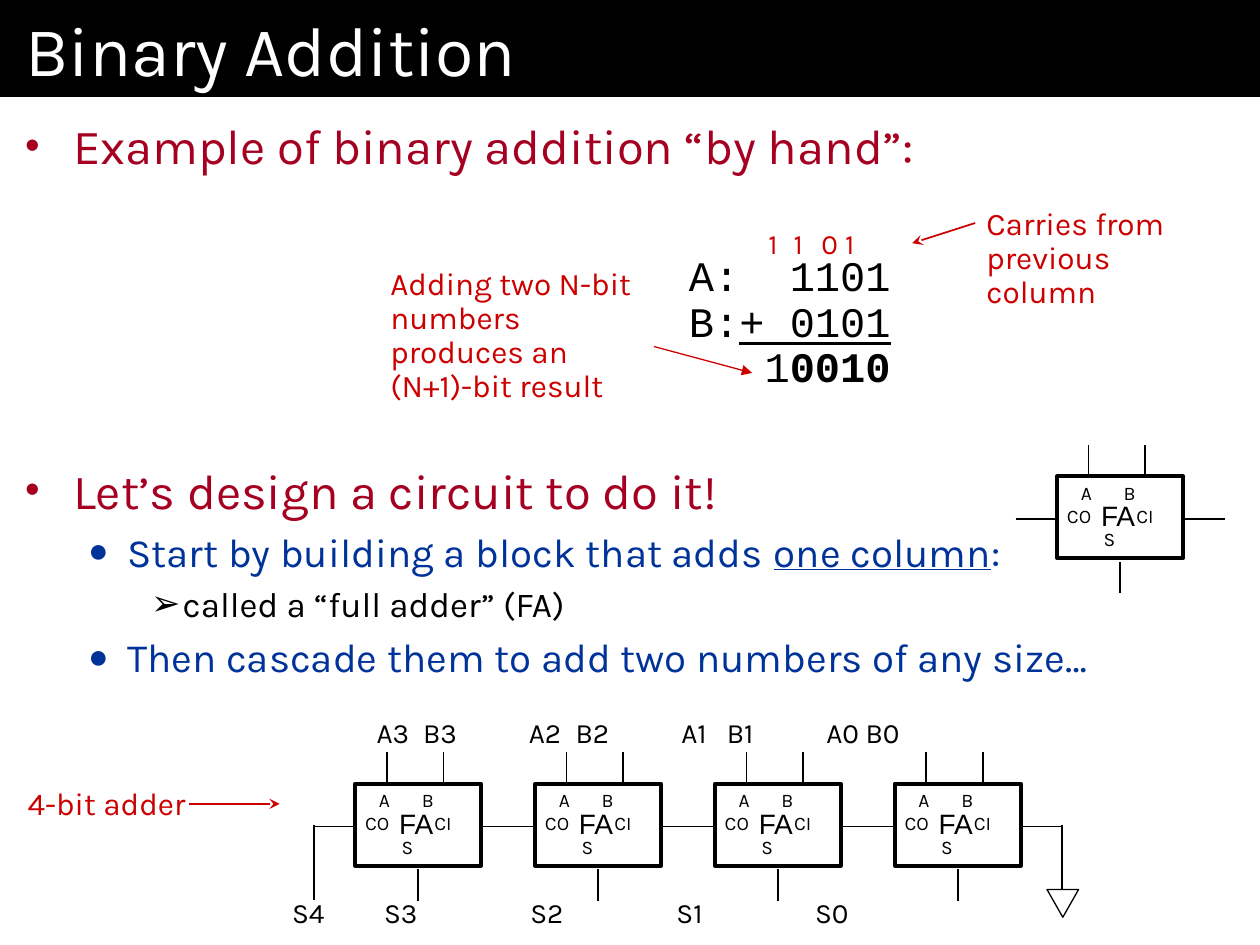
from lxml import etree
from pptx import Presentation
from pptx.dml.color import RGBColor
from pptx.enum.dml import MSO_FILL
from pptx.enum.shapes import MSO_CONNECTOR, MSO_SHAPE
from pptx.enum.text import MSO_ANCHOR, MSO_AUTO_SIZE, PP_ALIGN
from pptx.oxml.ns import qn
from pptx.util import Emu, Inches, Pt

STRAIGHT = MSO_CONNECTOR.STRAIGHT
RECT, TRIANGLE = MSO_SHAPE.RECTANGLE, MSO_SHAPE.ISOSCELES_TRIANGLE
LEFT, TOP, MIDDLE = PP_ALIGN.LEFT, MSO_ANCHOR.TOP, MSO_ANCHOR.MIDDLE
NO_FIT = MSO_AUTO_SIZE.NONE
COLS, ROWS = 100, 75
BLACK, WHITE, RED, CRIMSON, BLUE = "000000", "FFFFFF", "CC0000", "A50021", "003399"


def rgb(value):
    return RGBColor.from_string(value)


def add_xml(parent, tag, **attrs):
    return etree.SubElement(parent, qn(tag), {k: str(v) for k, v in attrs.items()})


class SlideBuilder:
    """Places styled elements on a grid of COLS by ROWS cells."""

    font = "Karla"

    def __init__(self, prs):
        self.slide = prs.slides.add_slide(prs.slide_layouts[1])
        self.col = prs.slide_width / COLS
        self.row = prs.slide_height / ROWS

    def cells(self, x, y):
        return Emu(round(x * self.col)), Emu(round(y * self.row))

    def place(self, sp, x, y, w, h):
        sp.left, sp.top = self.cells(x, y)
        sp.width, sp.height = self.cells(w, h)

    def frame(self, sp, side, edge, anchor=TOP, wrap=True):
        tf = sp.text_frame
        values = {"margin_left": Inches(side), "margin_right": Inches(side),
                  "margin_top": Inches(edge), "margin_bottom": Inches(edge),
                  "vertical_anchor": anchor, "auto_size": NO_FIT, "word_wrap": wrap}
        for name, value in values.items():
            setattr(tf, name, value)
        return tf

    def run(self, p, text, size, color, **extra):
        r = p.add_run()
        r.text = text
        for name, value in {"name": self.font, "size": Pt(size), **extra}.items():
            setattr(r.font, name, value)
        r.font.color.rgb = rgb(color)

    def title(self, text, *box):
        sp = self.slide.shapes.title
        self.place(sp, *box)
        sp.fill.solid()
        sp.fill.fore_color.rgb = rgb(BLACK)
        p = self.frame(sp, 0.2, 0.05, MIDDLE).paragraphs[0]
        p.alignment = LEFT
        self.run(p, text, 40, WHITE)

    def bullets(self, items, *box):
        """Fill the body with (level, space before, runs) items."""
        levels = [(0.38, -0.38, "•", 85, 28, CRIMSON),
                  (0.81, -0.31, "●", 85, 23, BLUE),
                  (1.25, -0.25, "➢", 100, 20, BLACK)]
        sp = self.slide.placeholders[1]
        self.place(sp, *box)
        tf = self.frame(sp, 0.2, 0.15)
        for i, (level, before, runs) in enumerate(items):
            p = tf.add_paragraph() if i else tf.paragraphs[0]
            margin, indent, mark, percent, size, color = levels[level]
            p.level = level
            if before:
                p.space_before = Pt(before)
            for text, extra in runs:
                self.run(p, text, size, color, **extra)
            ppr = p._p.get_or_add_pPr()
            ppr.set("marL", str(Inches(margin)))
            ppr.set("indent", str(Inches(indent)))
            add_xml(add_xml(ppr, "a:buClr"), "a:srgbClr", val=color)
            add_xml(ppr, "a:buSzPct", val=percent * 1000)
            add_xml(ppr, "a:buChar", char=mark)

    def text(self, lines, x, y, w, h, size, color=BLACK, spacing=None, wrap=True, **extra):
        """Write (runs, tab stops) lines; a plain string is a line of one run."""
        sp = self.slide.shapes.add_textbox(*self.cells(x, y), *self.cells(w, h))
        tf = self.frame(sp, 0.1, 0.05, wrap=wrap)
        for i, line in enumerate(lines):
            p = tf.add_paragraph() if i else tf.paragraphs[0]
            runs, stops = ([(line, {})], ()) if isinstance(line, str) else line
            if spacing:
                p.line_spacing = spacing
            for text, own in runs:
                self.run(p, text, size, color, **{**extra, **own})
            if stops:
                tabs = add_xml(p._p.get_or_add_pPr(), "a:tabLst")
                for stop in stops:
                    add_xml(tabs, "a:tab", pos=Inches(stop), algn="l")

    def note(self, lines, *box):
        self.text(lines, *box, 18, RED, 0.9)

    def line(self, x1, y1, x2, y2, color=BLACK, width=1, head=None):
        cxn = self.slide.shapes.add_connector(
            STRAIGHT, *self.cells(x1, y1), *self.cells(x2, y2))
        cxn.line.color.rgb = rgb(color)
        cxn.line.width = Pt(width)
        if head:
            add_xml(cxn.line._get_or_add_ln(), "a:tailEnd", type=head)
        add_xml(cxn._element.spPr, "a:effectLst")

    def outline(self, kind, x, y, w, h, width, rotation=0):
        sp = self.slide.shapes.add_shape(kind, *self.cells(x, y), *self.cells(w, h))
        sp.shadow.inherit = False
        sp.fill.background()
        sp.line.color.rgb = rgb(BLACK)
        sp.line.width = Pt(width)
        sp.rotation = rotation

    def full_adder(self, x, y):
        """Draw a block with its ports and wires, its corner at x, y."""
        self.outline(RECT, x, y, 10, 6.5, 2.25)
        ports = [tabbed("\tA\tB", 0.11, 0.45), tabbed("CO\tCI", 0.55), tabbed("\tS", 0.29)]
        self.text(ports, x - 0.2, y - 0.1, 11, 6.6, 11)
        wires = [(2.5, -2.5, 2.5, 0), (7, -2.5, 7, 0), (5, 6.8, 5, 9.3),
                 (10, 3.4, 13.3, 3.4), (-3.3, 3.4, 0, 3.4)]
        for x1, y1, x2, y2 in wires:
            self.line(x + x1, y + y1, x + x2, y + y2)
        self.text(["FA"], x + 2.5, y + 1.3, 4.7, 3.7, 16, wrap=False, name="Arial")


def tabbed(text, *stops):
    return [(text, {})], stops


def main():
    prs = Presentation()
    prs.slide_width, prs.slide_height = Inches(10), Inches(7.5)
    s = SlideBuilder(prs)

    s.title("Binary Addition", 0, 0, 100, 7.7)
    s.bullets([
        (0, None, [("Example of binary addition “by hand”:", {})]),
        (0, 163, [("Let’s design a circuit to do it!", {})]),
        (1, None, [("Start by building a block that adds ", {}),
                   ("one column", {"underline": True}), (":", {})]),
        (2, None, [("called a “full adder” (FA)", {})]),
        (1, None, [("Then cascade them to add two numbers of any size…", {})]),
    ], 0, 7.7, 100, 67.3)

    s.text([tabbed("A:\t1101", 0.8),
            ([("B:", {}), ("+ 0101", {"underline": True})], ()),
            ([("\t1", {}), ("0010", {"bold": True})], (0.6,))],
           53.7, 19.8, 19, 12, 24, spacing=0.9, name="Courier New")
    for x, carry in zip((60, 62, 64.2, 66.1), "1101"):
        s.text([carry], x, 17.8, 3.3, 3.5, 16, RED, 0.9, wrap=False)
    s.note(["Carries from", "previous column"], 77.3, 16, 21.1, 6.5)
    s.line(77.4, 17.7, 72.4, 19.3, RED, 1, "stealth")
    s.note(["Adding two N-bit numbers produces an (N+1)-bit result"], 30, 20.8, 22.5, 12)
    s.line(51.9, 27.5, 59.7, 29.6, RED, 0.75, "triangle")

    s.full_adder(83.9, 37.8)
    for i in range(4):
        s.full_adder(28.2 + 14.27 * i, 62.2)
    s.text([tabbed("A3\tB3\tA2\tB2\tA1\tB1\tA0 B0",
                   0.37, 1.21, 1.58, 2.42, 2.78, 3.57)], 28.9, 56.3, 51.4, 3.7, 16)
    s.text([tabbed("S4\tS3\tS2\tS1\tS0", 0.73, 1.89, 3.05, 4.15)],
           22.2, 70.6, 57.2, 3.7, 16)
    s.line(24.9, 65.5, 24.9, 71.4)
    s.line(84.3, 65.5, 84.3, 70.6)
    s.outline(TRIANGLE, 83.1, 70.6, 2.5, 2.2, 0.75, 180)
    s.note(["4-bit adder"], 1.2, 62.1, 21.1, 3.8)
    s.line(15, 63.8, 22.2, 63.8, RED, 1, "stealth")

    prs.save("out.pptx")


if __name__ == "__main__":
    main()
